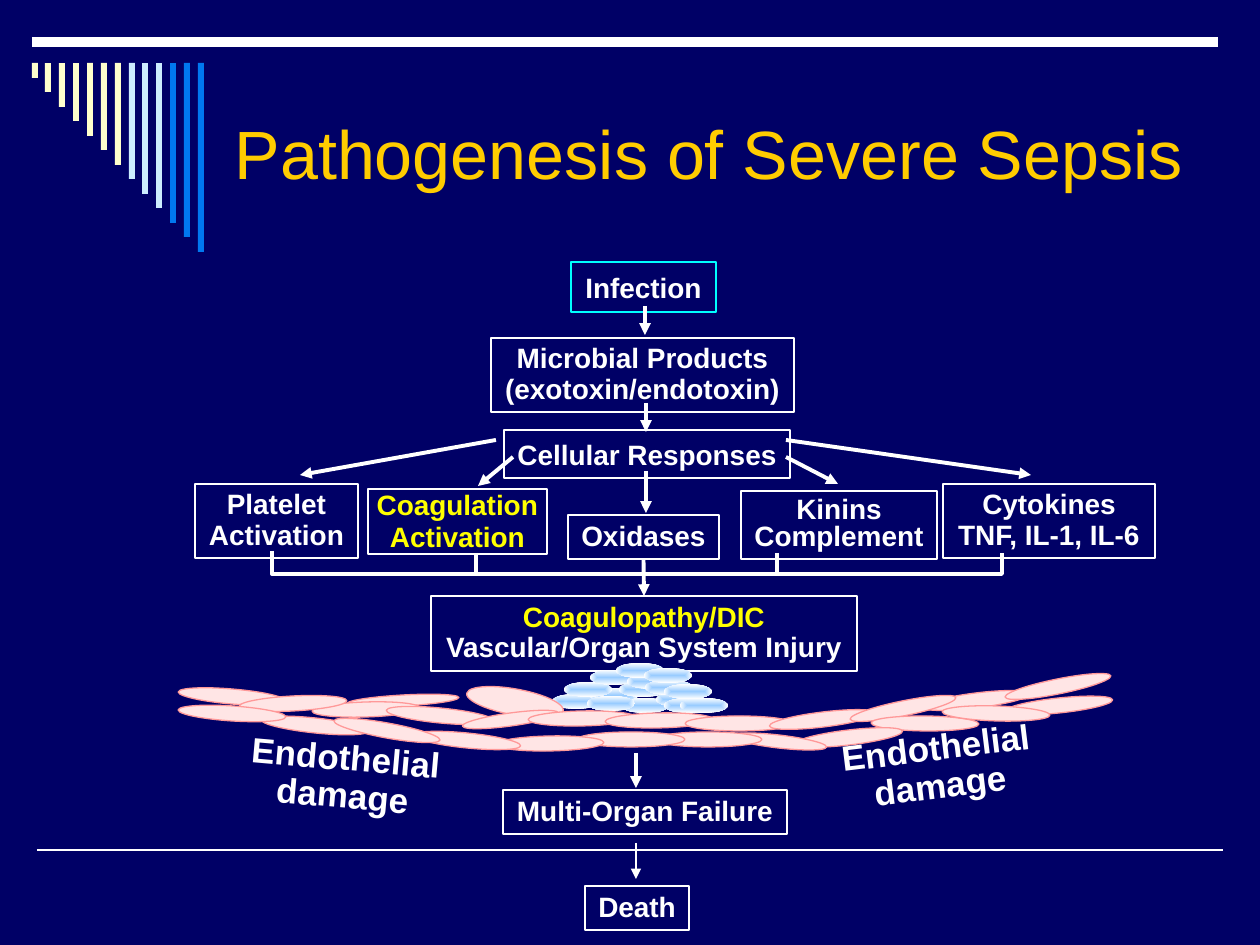
import lxml.etree
import pptx
import pptx.dml.color
import pptx.enum.shapes
import pptx.enum.text
import pptx.oxml
import pptx.oxml.ns
import pptx.util

PX = 914400 / 126
SHAPE = pptx.enum.shapes.MSO_SHAPE
COLORS = {
    "navy": "000066", "white": "FFFFFF", "gold": "FFCC00", "yellow": "FFFF00",
    "cyan": "00FFFF", "cream": "FFFFCC", "ice": "CCECFF", "blue": "0078F0",
    "sky": "99CCFF", "blush": "FFE5E5", "rose": "FF9999",
}

# key: left, top, width, height, line spacing, border colour, border width, lines
BOXES = {
    "infection": (571, 262, 145, 50, 1, "cyan", 1.5, ["Infection"]),
    "microbial": (491, 338, 303, 74, 0.9, "white", 0.75,
                  ["Microbial Products", "(exotoxin/endotoxin)"]),
    "cellular": (504, 430, 286, 48, 1, "white", 0.75, ["Cellular Responses"]),
    "oxidases": (568, 515, 151, 44, 0.9, "white", 0.75, ["Oxidases"]),
    "platelet": (195, 484, 163, 74, 0.9, "white", 0.75, ["Platelet", "Activation"]),
    "kinins": (741, 491, 196, 68, 0.8, "white", 0.75, ["Kinins", "Complement"]),
    "injury": (431, 596, 426, 75, 0.9, "white", 0.75,
               ["Coagulopathy/DIC", "Vascular/Organ System Injury"]),
    "failure": (503, 790, 284, 44, 0.9, "white", 0.75, ["Multi-Organ Failure"]),
    "death": (585, 886, 104, 44, 0.9, "white", 0.75, ["Death"]),
    "coagulation": (368, 489, 179, 65, 0.95, "white", 1, ["Coagulation\vActivation"]),
    "cytokines": (943, 484, 212, 74, 0.9, "white", 0.75,
                  ["Cytokines", "TNF, IL-1, IL-6"]),
}
YELLOW_LINES = {"Coagulopathy/DIC", "Coagulation\vActivation"}

ARROWS = [  # x1, y1, x2, y2, width
    (645, 306, 645, 335, 2.25), (646, 403, 646, 432, 2.25),
    (513, 457, 478, 486, 2.25), (786, 457, 838, 484, 2.25),
    (646, 471, 646, 513, 2.25), (786, 440, 1031, 475, 2.25),
    (496, 440, 300, 475, 2.25), (636, 753, 636, 788, 2.25),
    (636, 843, 636, 879, 1),
]

PLATELETS = [  # left, top
    (552, 694), (590, 688), (619, 682), (621, 698), (564, 682),
    (590, 670), (587, 696), (656, 692), (627, 674), (645, 680),
    (664, 698), (616, 663), (680, 698), (664, 684), (644, 668),
]

CELL, THIN = (108, 15), (97, 13)
ENDOTHELIUM = [  # left, top, size, rotation
    (347, 695, (112, 11), -3.1), (466, 689, (98, 26), 10.2),
    # upper layer
    (178, 689, CELL, 4.8), (312, 702, CELL, -1.8), (386, 708, CELL, 5.5),
    (462, 713, THIN, -7.8), (239, 696, CELL, -3), (922, 693, CELL, -7.1),
    (528, 711, CELL, -1.2), (605, 713, CELL, -1.2), (685, 716, CELL, 0),
    (769, 712, CELL, -6.9), (849, 701, CELL, -11.5), (1004, 679, CELL, -11.4),
    # lower layer
    (1005, 698, CELL, -6), (871, 716, CELL, 0.6), (795, 730, CELL, -6.7),
    (730, 735, THIN, 6.6), (942, 706, CELL, 1.8), (261, 718, CELL, 6),
    (654, 732, CELL, 0), (577, 732, CELL, 0), (496, 736, CELL, -1.1),
    (413, 733, CELL, 5.7), (333, 723, CELL, 10.3), (178, 706, CELL, 3.7),
]


def emu(*lengths):
    return [round(n * PX) for n in lengths]


def rgb(name):
    return pptx.dml.color.RGBColor.from_string(COLORS[name])


def set_line(s, color, width):
    s.line.color.rgb = rgb(color)
    s.line.width = pptx.util.Pt(width)


def add_shape(shapes, kind, box, fill=None, line=None, width=0.75, rotation=0):
    s = shapes.add_shape(kind, *emu(*box))
    s.shadow.inherit = False
    s.rotation = rotation
    if fill:
        s.fill.solid()
        s.fill.fore_color.rgb = rgb(fill)
    else:
        s.fill.background()
    if line:
        set_line(s, line, width)
    else:
        s.line.fill.background()
    return s


def write(s, lines, size, color="white", bold=True, spacing=1):
    tf = s.text_frame
    tf.word_wrap = False
    tf.vertical_anchor = pptx.enum.text.MSO_ANCHOR.MIDDLE
    for i, line in enumerate(lines):
        p = tf.add_paragraph() if i else tf.paragraphs[0]
        p.text = line
        p.alignment = pptx.enum.text.PP_ALIGN.CENTER
        p.line_spacing = spacing
        p.font.name = "Arial"
        p.font.size = pptx.util.Pt(size)
        p.font.bold = bold
        p.font.color.rgb = rgb("yellow" if line in YELLOW_LINES else color)


def add_text(shapes, box, lines, size, rotation=0, **style):
    s = shapes.add_textbox(*emu(*box))
    s.rotation = rotation
    write(s, lines, size, **style)


def add_line(shapes, x1, y1, x2, y2, width, arrow=False):
    s = shapes.add_connector(pptx.enum.shapes.MSO_CONNECTOR.STRAIGHT,
                             *emu(x1, y1, x2, y2))
    set_line(s, "white", width)
    spPr, qn = s._element.spPr, pptx.oxml.ns.qn
    if arrow:
        lxml.etree.SubElement(spPr.find(qn("a:ln")), qn("a:tailEnd"), type="triangle")
    lxml.etree.SubElement(spPr, qn("a:effectLst"))
    return s


def add_bracket(shapes):
    points = [emu(*pt) for pt in [(272, 551), (272, 574), (1002, 574), (1002, 553)]]
    builder = shapes.build_freeform(*points[0])
    builder.add_line_segments(points[1:], close=False)
    s = builder.convert_to_shape()
    s.shadow.inherit = False
    s.fill.background()
    set_line(s, "white", 2.25)


def add_platelet(shapes, left, top):
    s = add_shape(shapes, SHAPE.OVAL, (left, top, 48, 15))
    spPr = s._element.spPr
    gradient = pptx.oxml.parse_xml(
        f'<a:gradFill {pptx.oxml.ns.nsdecls("a")} rotWithShape="1"><a:gsLst>'
        f'<a:gs pos="0"><a:srgbClr val="{COLORS["sky"]}"/></a:gs>'
        f'<a:gs pos="100000"><a:srgbClr val="{COLORS["white"]}"/></a:gs></a:gsLst>'
        '<a:path path="shape"><a:fillToRect l="50000" t="50000" r="50000" b="50000"/>'
        '</a:path></a:gradFill>')
    spPr.replace(spPr.find(pptx.oxml.ns.qn("a:noFill")), gradient)


def add_decoration(shapes):
    add_line(shapes, 37, 850, 1223, 850, 1)
    add_line(shapes, 32, 42, 1218, 42, 6)
    bars = ["cream"] * 7 + ["ice"] * 3 + ["blue"] * 3
    for i, color in enumerate(bars):
        box = (round(31.5 + 13.86 * i), 63, 6, round(189 * (i + 1) / len(bars)))
        add_shape(shapes, SHAPE.RECTANGLE, box, fill=color)


def main():
    prs = pptx.Presentation()
    prs.slide_width, prs.slide_height = emu(1260, 945)
    slide = prs.slides.add_slide(prs.slide_layouts[6])
    slide.background.fill.solid()
    slide.background.fill.fore_color.rgb = rgb("navy")
    shapes = slide.shapes

    # Header
    add_decoration(shapes)
    add_text(shapes, (179, 84, 1060, 136), ["Pathogenesis of Severe Sepsis"], 39,
             color="gold", bold=False)

    # Flow chart boxes
    boxes = {}
    for key, (x, y, w, h, spacing, line, width, lines) in BOXES.items():
        boxes[key] = add_shape(shapes, SHAPE.RECTANGLE, (x, y, w, h),
                               line=line, width=width)
        write(boxes[key], lines, 16, spacing=spacing)

    # Bracket gathering the five responses
    add_bracket(shapes)
    for x in (476, 777):
        add_line(shapes, x, 553, x, 574, 2.25)
    s = add_line(shapes, 643, 559, 644, 596, 2.25, arrow=True)
    s.begin_connect(boxes["oxidases"], 2)
    s.end_connect(boxes["injury"], 0)

    # Arrows
    for arrow in ARROWS:
        add_line(shapes, *arrow, arrow=True)

    # Clot and vessel wall
    for left, top in PLATELETS:
        add_platelet(shapes, left, top)
    for left, top, size, rotation in ENDOTHELIUM:
        add_shape(shapes, SHAPE.OVAL, (left, top, *size), fill="blush",
                  line="rose", rotation=rotation)
    for left, top, rotation in [(234, 733, 5), (828, 723, -7)]:
        add_text(shapes, (left, top, 220, 90), ["Endothelial\vdamage"], 20,
                 rotation=rotation, spacing=0.9)

    prs.save("out.pptx")


if __name__ == "__main__":
    main()
